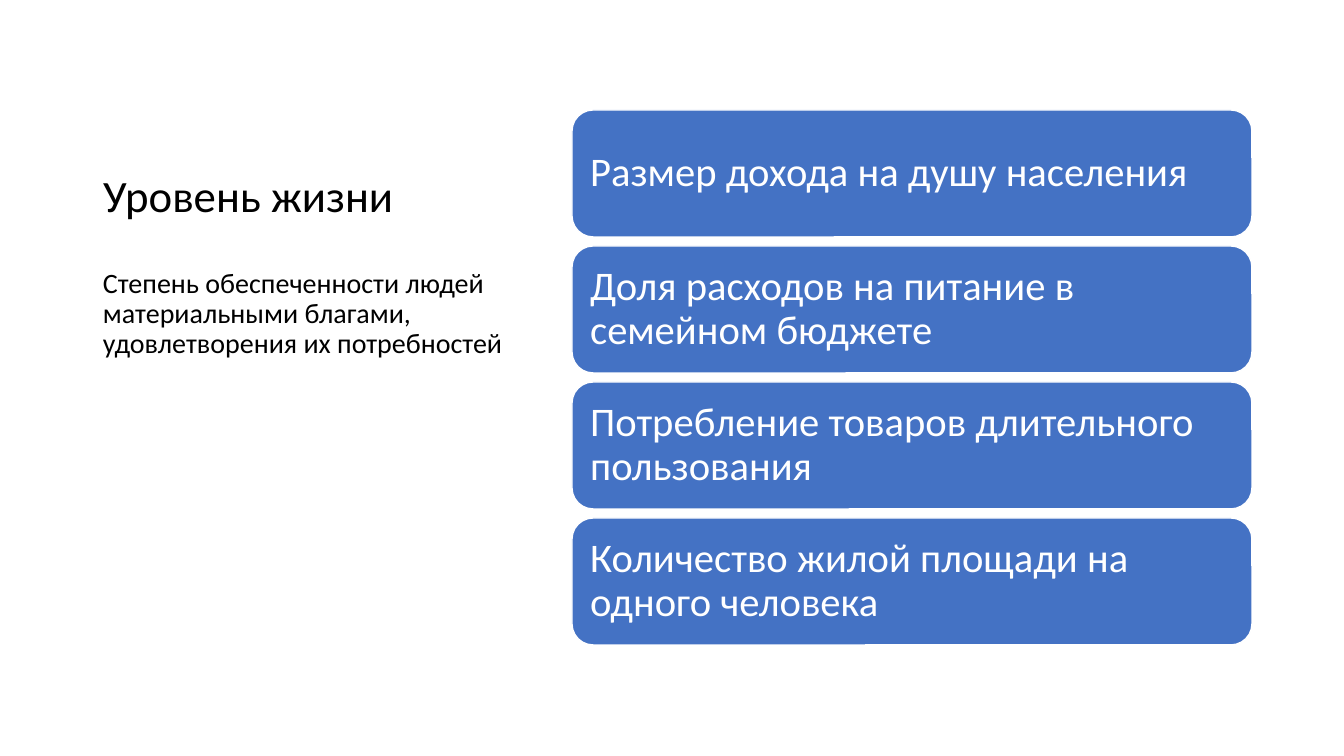
from pptx import Presentation
from pptx import util as u
from pptx.dml.color import RGBColor
from pptx.enum import shapes, text

TITLE = "Уровень жизни"
DEFINITION = "Степень обеспеченности людей материальными благами, удовлетворения их потребностей"
INDICATORS = [
    "Размер дохода на душу населения",
    "Доля расходов на питание в семейном бюджете",
    "Потребление товаров длительного пользования",
    "Количество жилой площади на одного человека",
]

FONT = "Calibri"
BLACK, WHITE, BLUE = "000000", "FFFFFF", "4472C4"
SLIDE_SIZE = (1344, 756)
TITLE_BOX = (93, 50, 433, 177)
DEFINITION_BOX = (93, 264, 433, 420)
CARD_LEFT, CARD_TOP, CARD_WIDTH, CARD_HEIGHT = 572, 110, 680, 127
CARD_STEP = 136
CARD_INSET = 12


def px(length):
    return u.Emu(round(length * 914400 / 100.8))


def color(value):
    return RGBColor.from_string(value)


def write(shape, wording, size, ink, anchor):
    """Put one left-aligned, wrapped paragraph into the shape."""
    frame = shape.text_frame
    frame.text = wording
    frame.word_wrap = True
    frame.auto_size = text.MSO_AUTO_SIZE.NONE
    frame.vertical_anchor = anchor
    para = frame.paragraphs[0]
    para.alignment = text.PP_ALIGN.LEFT
    para.line_spacing = 0.9
    span = para.runs[0]
    span.font.name = FONT
    span.font.size = u.Pt(size)
    span.font.color.rgb = color(ink)
    return para


def add_card(page, top, wording):
    box = map(px, (CARD_LEFT, top, CARD_WIDTH, CARD_HEIGHT))
    card = page.shapes.add_shape(shapes.MSO_SHAPE.ROUNDED_RECTANGLE, *box)
    card.shadow.inherit = False
    card.fill.solid()
    card.fill.fore_color.rgb = color(BLUE)
    card.line.color.rgb = color(WHITE)
    card.line.width = u.Pt(1)
    frame = card.text_frame
    frame.margin_left = frame.margin_right = px(CARD_INSET)
    frame.margin_top = frame.margin_bottom = px(CARD_INSET)
    write(card, wording, 29, WHITE, text.MSO_ANCHOR.MIDDLE)


def main():
    deck = Presentation()
    deck.slide_width, deck.slide_height = map(px, SLIDE_SIZE)
    page = deck.slides.add_slide(deck.slide_layouts.get_by_name("Title Only"))

    title = page.shapes.title
    title.left, title.top, title.width, title.height = map(px, TITLE_BOX)
    write(title, TITLE, 32, BLACK, text.MSO_ANCHOR.BOTTOM)

    for row, indicator in enumerate(INDICATORS):
        add_card(page, CARD_TOP + row * CARD_STEP, indicator)

    definition = page.shapes.add_textbox(*map(px, DEFINITION_BOX))
    para = write(definition, DEFINITION, 20, BLACK, text.MSO_ANCHOR.TOP)
    para.space_before = u.Pt(10)

    deck.save("out.pptx")


if __name__ == "__main__":
    main()
